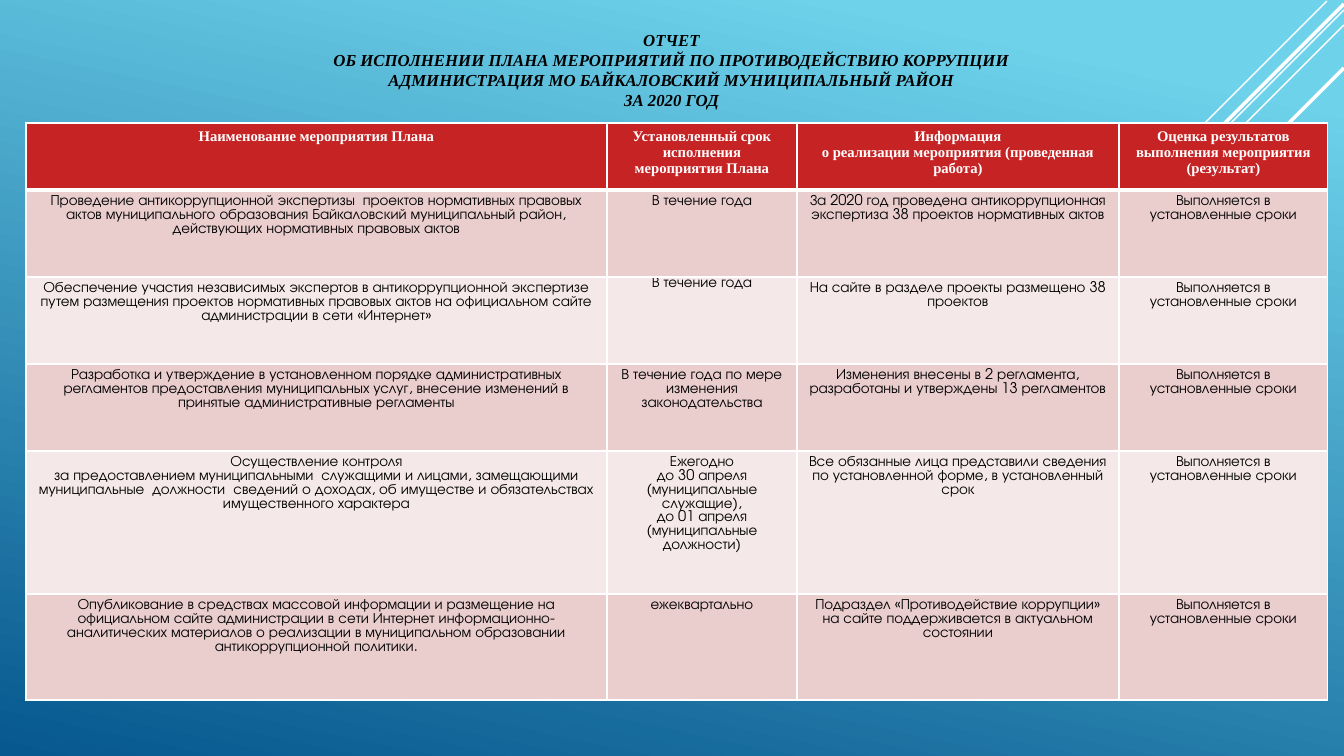
import pptx
import pptx.util
import pptx.dml.color
import pptx.enum.shapes
import pptx.enum.text
import pptx.oxml
import pptx.oxml.ns

ANCHOR = pptx.enum.text.MSO_ANCHOR


class Theme:
    sky, sea = "6ED2EB", "06588E"
    white, black = "FFFFFF", "000000"
    head, bands = "C62324", ("EACDCD", "F5E8E8")
    serif, sans = "Times New Roman", "TeX Gyre Adventor"
    title, cell = 12, 10.5
    lead, tight = 14.3, 9.8
    thin, thick, rule = 1, 2.5, 3


TITLE = (
    "ОТЧЕТ\vОБ ИСПОЛНЕНИИ ПЛАНА МЕРОПРИЯТИЙ ПО ПРОТИВОДЕЙСТВИЮ КОРРУПЦИИ\v"
    "АДМИНИСТРАЦИЯ МО БАЙКАЛОВСКИЙ МУНИЦИПАЛЬНЫЙ РАЙОН\vЗА 2020 ГОД"
)
HEADS = (
    "Наименование мероприятия Плана",
    "Установленный срок исполнения мероприятия Плана",
    "Информация\vо реализации мероприятия (проведенная работа)",
    "Оценка результатов выполнения мероприятия (результат)",
)
RESULT = "Выполняется в установленные сроки"
TASKS = (
    ("Проведение антикоррупционной экспертизы  проектов нормативных правовых "
     "актов муниципального образования Байкаловский муниципальный район, "
     "действующих нормативных правовых актов",
     "В течение года",
     "За 2020 год проведена антикоррупционная экспертиза 38 проектов "
     "нормативных актов"),
    ("Обеспечение участия независимых экспертов в антикоррупционной экспертизе "
     "путем размещения проектов нормативных правовых актов на официальном сайте "
     "администрации в сети «Интернет»",
     "В течение года",
     "На сайте в разделе проекты размещено 38 проектов"),
    ("Разработка и утверждение в установленном порядке административных "
     "регламентов предоставления муниципальных услуг, внесение изменений в "
     "принятые административные регламенты",
     "В течение года по мере изменения законодательства",
     "Изменения внесены в 2 регламента, разработаны и утверждены 13 регламентов"),
    ("Осуществление контроля\nза предоставлением муниципальными  служащими и "
     "лицами, замещающими муниципальные  должности  сведений о доходах, об "
     "имуществе и обязательствах имущественного характера",
     "Ежегодно\nдо 30 апреля (муниципальные служащие),\nдо 01 апреля\n"
     "(муниципальные должности)",
     "Все обязанные лица представили сведения по установленной форме, "
     "в установленный срок"),
    ("Опубликование в средствах массовой информации и размещение на официальном "
     "сайте администрации в сети Интернет информационно-аналитических материалов "
     "о реализации в муниципальном образовании антикоррупционной политики.",
     "ежеквартально",
     "Подраздел «Противодействие коррупции» на сайте поддерживается в "
     "актуальном состоянии"),
)
COLS = (581, 190, 322, 209)
ROWS = (67, 87, 87, 87, 143, 106)
RAYS = (
    (1327, 1, 420, Theme.thin),
    (1344, 10, 670, Theme.thin),
    (1344, 25, 546, Theme.thin),
    (1344, 4, 535, Theme.thick),
    (1344, 68, 479, Theme.thick),
)


def px(size):
    return pptx.util.Emu(round(size * 12192000 / 1344))


def color(code):
    return pptx.dml.color.RGBColor.from_string(code)


def write(frame, text, font=Theme.sans, size=Theme.cell, ink=Theme.black,
          bold=False, slant=False, lead=None):
    frame.word_wrap = True
    frame.text = text
    for para in frame.paragraphs:
        para.alignment = pptx.enum.text.PP_ALIGN.CENTER
        if lead:
            para.line_spacing = pptx.util.Pt(lead)
        for run in para.runs:
            run.font.name = font
            run.font.size = pptx.util.Pt(size)
            run.font.bold = bold
            run.font.italic = slant
            run.font.color.rgb = color(ink)


def paint(slide):
    fill = slide.background.fill
    fill.gradient()
    fill.gradient_angle = 360 - 102
    stops = zip(fill.gradient_stops, (0.1, 1), (Theme.sky, Theme.sea))
    for stop, place, code in stops:
        stop.position = place
        stop.color.rgb = color(code)


def ray(slide, left, top, reach, width):
    line = slide.shapes.add_connector(
        pptx.enum.shapes.MSO_CONNECTOR.STRAIGHT,
        px(left), px(top), px(left - reach), px(top + reach))
    line.line.color.rgb = color(Theme.white)
    line.line.width = pptx.util.Pt(width)
    pptx.oxml.ns.qn("a:effectLst")
    line._element.spPr.append(pptx.oxml.parse_xml(
        f'<a:effectLst {pptx.oxml.ns.nsdecls("a")}/>'))


def edge(cell, top, base):
    props = cell._tc.get_or_add_tcPr()
    sides = (("L", Theme.thin), ("R", Theme.thin), ("T", top), ("B", base))
    for spot, (side, width) in enumerate(sides):
        props.insert(spot, pptx.oxml.parse_xml(
            f'<a:ln{side} {pptx.oxml.ns.nsdecls("a")} w="{width * 12700}">'
            f'<a:solidFill><a:srgbClr val="{Theme.white}"/></a:solidFill>'
            f'</a:ln{side}>'))


def block(cell, text, fill, top=Theme.thin, base=Theme.thin, **form):
    cell.fill.solid()
    cell.fill.fore_color.rgb = color(fill)
    edge(cell, top, base)
    write(cell.text_frame, text, **form)


def grid(slide):
    table = slide.shapes.add_table(
        len(ROWS), len(COLS), px(26), px(123),
        px(sum(COLS)), px(sum(ROWS))).table
    for col, width in zip(table.columns, COLS):
        col.width = px(width)
    for row, height in zip(table.rows, ROWS):
        row.height = px(height)
    for col, text in enumerate(HEADS):
        block(table.cell(0, col), text, Theme.head, base=Theme.rule,
              font=Theme.serif, ink=Theme.white, bold=True)
    for row, task in enumerate(TASKS, 1):
        for col, text in enumerate((*task, RESULT)):
            block(table.cell(row, col), text, Theme.bands[(row - 1) % 2],
                  top=Theme.rule if row == 1 else Theme.thin,
                  lead=Theme.tight)
    term = table.cell(2, 1)
    term.margin_left = term.margin_right = px(7)
    term.margin_top = term.margin_bottom = 0


def main():
    deck = pptx.Presentation()
    deck.slide_width, deck.slide_height = px(1344), px(756)
    slide = deck.slides.add_slide(deck.slide_layouts[6])
    paint(slide)
    for item in RAYS:
        ray(slide, *item)
    title = slide.shapes.add_textbox(px(296), px(13), px(751), px(102))
    title.text_frame.vertical_anchor = ANCHOR.BOTTOM
    write(title.text_frame, TITLE, font=Theme.serif, size=Theme.title,
          bold=True, slant=True, lead=Theme.lead)
    grid(slide)
    deck.save("out.pptx")


if __name__ == "__main__":
    main()
